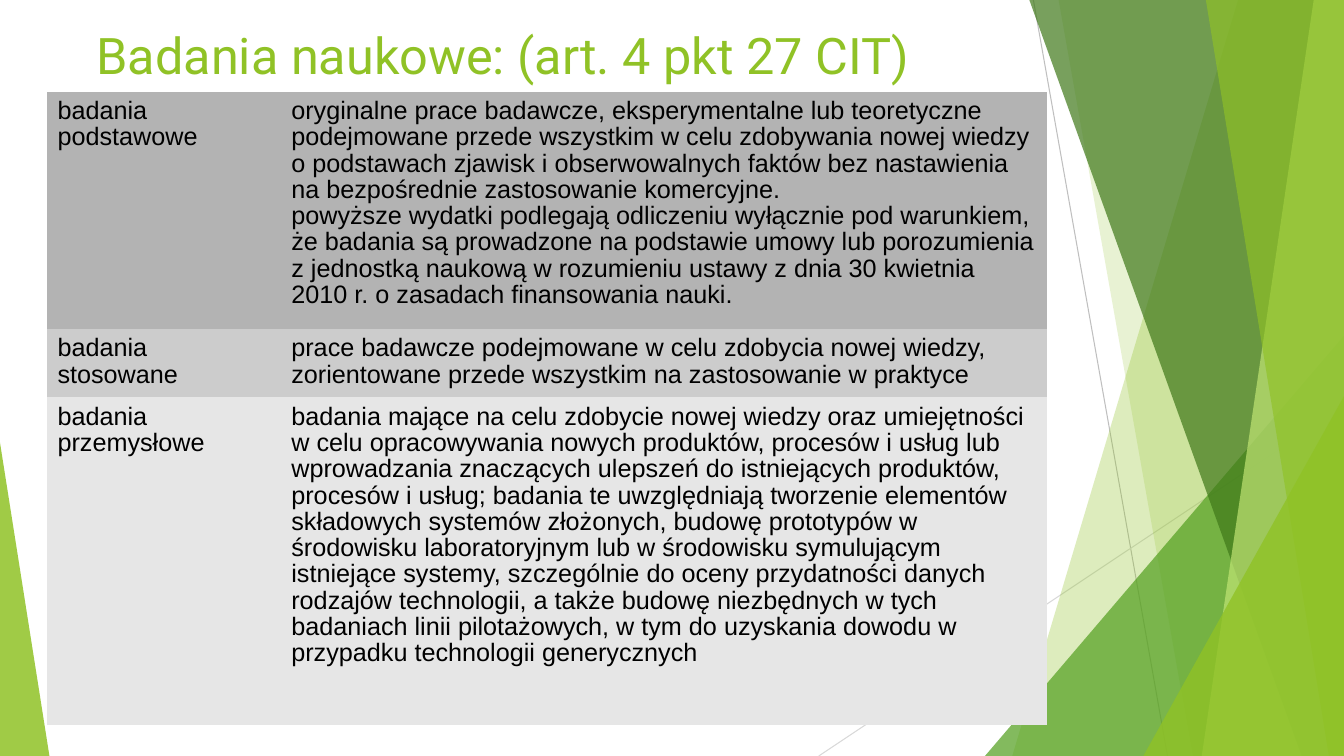
from lxml import etree
from pptx import Presentation
from pptx import util as u
from pptx.dml import color
from pptx.enum import shapes, text
from pptx.oxml import ns

WIDTH, HEIGHT = u.Inches(13.33), u.Inches(7.5)

COLORS = {
    "lime": "90C226", "pale_lime": "C0E474", "green": "54A021",
    "forest": "3F7819", "line": "BFBFBF", "light_line": "D9D9D9",
    "basic": "B3B3B3", "applied": "CCCCCC", "industrial": "E6E6E6",
    "ink": "000000", "border": "FFFFFF",
}

RESEARCH_KINDS = [
    ("basic", 30, "badania podstawowe", [
        "oryginalne prace badawcze, eksperymentalne lub teoretyczne podejmowane przede "
        "wszystkim w celu zdobywania nowej wiedzy o podstawach zjawisk i obserwowalnych "
        "faktów bez nastawienia na bezpośrednie zastosowanie komercyjne.",
        "powyższe wydatki podlegają odliczeniu wyłącznie pod warunkiem, że badania są "
        "prowadzone na podstawie umowy lub porozumienia z jednostką naukową w rozumieniu "
        "ustawy z dnia 30 kwietnia 2010 r. o zasadach finansowania nauki."]),
    ("applied", 9.07, "badania stosowane", [
        "prace badawcze podejmowane w celu zdobycia nowej wiedzy, zorientowane przede "
        "wszystkim na zastosowanie w praktyce"]),
    ("industrial", 43.33, "badania przemysłowe", [
        "badania mające na celu zdobycie nowej wiedzy oraz umiejętności w celu "
        "opracowywania nowych produktów, procesów i usług lub wprowadzania znaczących "
        "ulepszeń do istniejących produktów, procesów i usług; badania te uwzględniają "
        "tworzenie elementów składowych systemów złożonych, budowę prototypów w środowisku "
        "laboratoryjnym lub w środowisku symulującym istniejące systemy, szczególnie do "
        "oceny przydatności danych rodzajów technologii, a także budowę niezbędnych w tych "
        "badaniach linii pilotażowych, w tym do uzyskania dowodu w przypadku technologii "
        "generycznych"]),
]


# Lengths are percentages of the slide's width and height
def across(share):
    return u.Emu(round(WIDTH * share / 100))


def down(share):
    return u.Emu(round(HEIGHT * share / 100))


def rgb(name):
    return color.RGBColor.from_string(COLORS[name])


def tint(shape, name, opacity):
    shape.shadow.inherit = False
    shape.line.fill.background()
    shape.fill.solid()
    shape.fill.fore_color.rgb = rgb(name)
    fill_color = shape.fill._xPr.find(".//" + ns.qn("a:srgbClr"))
    etree.SubElement(fill_color, ns.qn("a:alpha"), val=str(opacity * 1000))


def add_ray(slide, start, end, name):
    ray = slide.shapes.add_connector(
        shapes.MSO_CONNECTOR.STRAIGHT,
        across(start[0]), down(start[1]), across(end[0]), down(end[1]))
    ray.line.color.rgb = rgb(name)
    ray.line.width = u.Pt(0.75)
    etree.SubElement(ray._element.spPr, ns.qn("a:effectLst"))


def add_band(slide, top_left, bottom_left, name, opacity):
    """A full-height band that reaches the right edge of the slide."""
    builder = slide.shapes.build_freeform(across(top_left), 0)
    builder.add_line_segments(
        [(WIDTH, 0), (WIDTH, HEIGHT), (across(bottom_left), HEIGHT)], close=True)
    tint(builder.convert_to_shape(), name, opacity)


def add_corner(slide, left, top, width, apex, name, opacity):
    """A triangle that stands on the bottom edge of the slide."""
    corner = slide.shapes.add_shape(
        shapes.MSO_SHAPE.ISOSCELES_TRIANGLE,
        across(left), down(top), across(width), down(100 - top))
    corner.adjustments[0] = apex
    tint(corner, name, opacity)


def add_title(slide, wording):
    frame = slide.shapes.add_textbox(
        across(6.45), down(2.53), across(70.5), down(19.2)).text_frame
    frame.word_wrap = True
    frame.vertical_anchor = text.MSO_ANCHOR.TOP
    heading = frame.paragraphs[0]
    heading.text = wording
    heading.font.name = "Roboto"
    heading.font.size = u.Pt(36)
    heading.font.color.rgb = rgb("lime")


def fill_cell(cell, paragraphs, shade):
    cell.fill.solid()
    cell.fill.fore_color.rgb = rgb(shade)
    cell.margin_left = cell.margin_right = u.Inches(0.1)
    cell.margin_top, cell.margin_bottom = u.Inches(0.07), u.Inches(0.05)
    cell.text = "\n".join(paragraphs)
    for paragraph in cell.text_frame.paragraphs:
        paragraph.line_spacing = 0.93
        paragraph.font.name = "Arial"
        paragraph.font.size = u.Pt(18)
        paragraph.font.color.rgb = rgb("ink")
    # Hairline borders come before the fill in the cell's properties
    properties = cell._tc.get_or_add_tcPr()
    for place, side in enumerate(("lnL", "lnR", "lnT", "lnB")):
        border = etree.Element(ns.qn("a:" + side), w="381")
        solid = etree.SubElement(border, ns.qn("a:solidFill"))
        etree.SubElement(solid, ns.qn("a:srgbClr"), val=COLORS["border"])
        properties.insert(place, border)


def add_research_table(slide, kinds):
    column_shares = (17.4, 57)
    height = sum(share for _, share, _, _ in kinds)
    table = slide.shapes.add_table(
        len(kinds), len(column_shares), across(3.53), down(12.13),
        across(sum(column_shares)), down(height)).table
    table.first_row = table.horz_banding = False
    for column, share in zip(table.columns, column_shares):
        column.width = across(share)
    for row, (shade, share, kind, definition) in zip(table.rows, kinds):
        row.height = down(share)
        fill_cell(row.cells[0], [kind], shade)
        fill_cell(row.cells[1], definition, shade)


def main():
    deck = Presentation()
    deck.slide_width, deck.slide_height = WIDTH, HEIGHT
    slide = deck.slides.add_slide(deck.slide_layouts[6])

    # Background facets, back to front
    add_ray(slide, (76.89, 0), (86.87, 100), "line")
    add_ray(slide, (100, 53.73), (60.92, 100), "light_line")
    add_band(slide, 92.12, 75.32, "lime", 30)
    add_band(slide, 78.77, 88.75, "lime", 20)
    add_corner(slide, 73.29, 44.4, 26.71, 1, "green", 72)
    add_band(slide, 76.59, 96.85, "forest", 70)
    add_band(slide, 97.75, 89.42, "pale_lime", 70)
    add_band(slide, 89.72, 98.87, "lime", 65)
    add_corner(slide, 85.07, 52.4, 14.93, 1, "lime", 80)
    add_corner(slide, 0, 58.53, 3.68, 0, "lime", 85)

    # Content
    add_title(slide, "Badania naukowe: (art. 4 pkt 27 CIT)")
    add_research_table(slide, RESEARCH_KINDS)

    deck.save("out.pptx")


if __name__ == "__main__":
    main()
